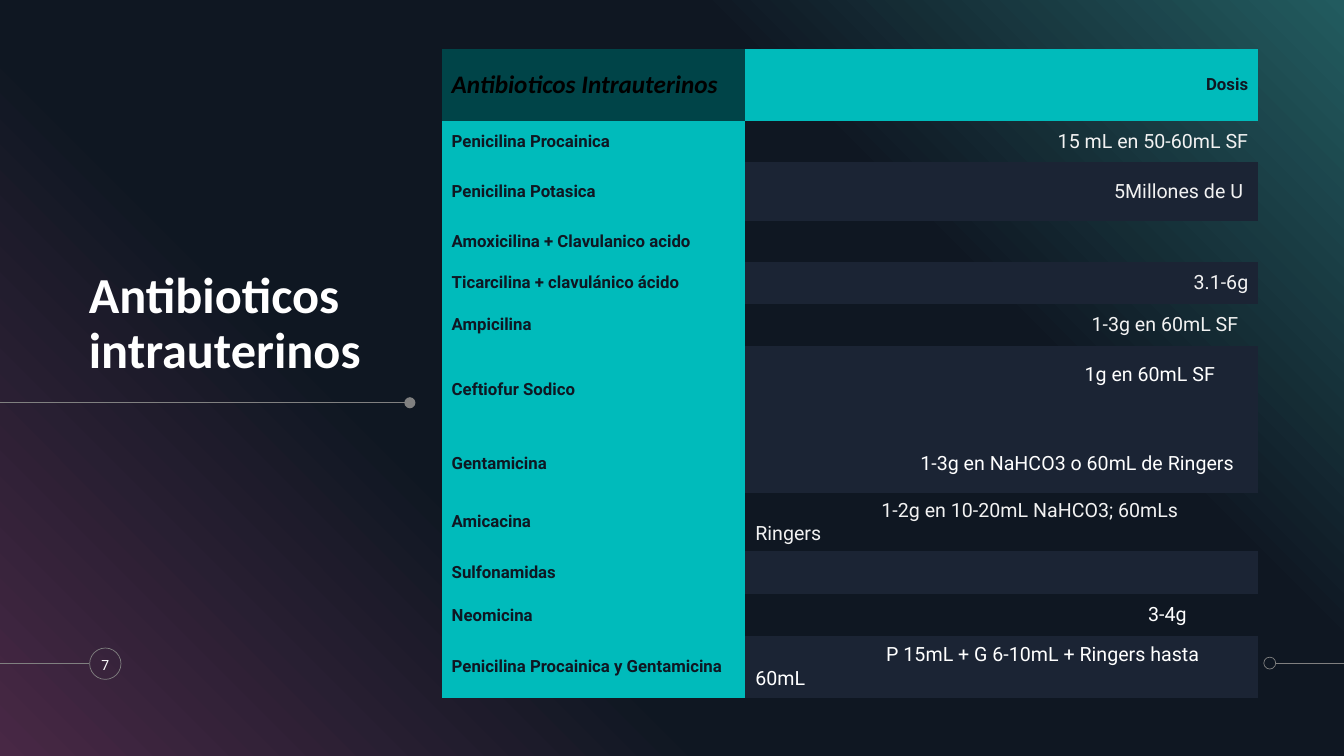
from dataclasses import dataclass

import pptx
import pptx.dml.color
import pptx.enum.shapes
import pptx.enum.text
import pptx.oxml
import pptx.oxml.ns
import pptx.util
from lxml import etree

Cm = pptx.util.Cm
Pt = pptx.util.Pt
Align = pptx.enum.text.PP_ALIGN
Anchor = pptx.enum.text.MSO_ANCHOR
NO_GRID_STYLE = "{2D5ABB26-0587-4C30-8999-92F81FD0307C}"


@dataclass(frozen=True)
class Theme:
    heading_font: str = "Calibri"
    body_font: str = "Roboto"
    title_size: float = 36
    header_size: float = 18
    dose_size: float = 14
    drug_size: float = 12
    number_size: float = 10
    white: str = "FFFFFF"
    soft_white: str = "F2F2F2"
    black: str = "000000"
    ink: str = "0F1722"
    teal: str = "00BBBB"
    dark_teal: str = "004448"
    band: str = "1B2434"
    grey: str = "808080"
    rule_width: float = 0.5
    backdrop: tuple = ((0, "482845"), (34, "0F1722"), (69, "0F1722"), (100, "225B5F"))


@dataclass(frozen=True)
class Treatment:
    """One table row; lengths in cm. A first-line indent makes the dose left-aligned."""
    drug: str
    dose: str
    height: float
    shaded: bool
    soft: bool = True
    indent: float = 0
    right: float = 0.25
    bottom: float = 0.13


TREATMENTS = [
    Treatment("Penicilina Procainica", "15 mL en 50-60mL SF", 1.05, False),
    Treatment("Penicilina Potasica", "5Millones de U", 1.47, True, right=0.38),
    Treatment("Amoxicilina + Clavulanico acido", "", 1.05, False),
    Treatment("Ticarcilina + clavulánico ácido", "3.1-6g", 1.05, True),
    Treatment("Ampicilina", "1-3g en 60mL SF", 1.05, False, right=0.5),
    Treatment("Ceftiofur Sodico", "1g en 60mL SF", 2.24, True, False, 8.3, bottom=0.9),
    Treatment("Gentamicina", "1-3g en NaHCO3 o 60mL de Ringers", 1.47, True, False, 4.16),
    Treatment("Amicacina", "1-2g en 10-20mL NaHCO3; 60mLs Ringers", 1.47, False,
              indent=3.18, right=0.75),
    Treatment("Sulfonamidas", "", 1.09, True),
    Treatment("Neomicina", "3-4g", 1.05, False, False, 9.9),
    Treatment("Penicilina Procainica y Gentamicina", "P 15mL + G 6-10mL + Ringers hasta 60mL",
              1.55, True, False, 3.3),
]


def rgb(value):
    return pptx.dml.color.RGBColor.from_string(value)


class SlideBuilder:
    def __init__(self, slide, theme):
        self.slide = slide
        self.theme = theme

    def set_text(self, frame, text, size, color, bold=False, italic=False,
                 font=None, align=Align.LEFT):
        paragraph = frame.paragraphs[0]
        paragraph.text = text
        paragraph.alignment = align
        for run in paragraph.runs:
            run.font.name = font or self.theme.body_font
            run.font.size = Pt(size)
            run.font.bold = bold
            run.font.italic = italic
            run.font.color.rgb = rgb(color)
        return paragraph

    def backdrop(self):
        fill = self.slide.background.fill
        fill.gradient()
        fill.gradient_angle = 45
        stops = self.slide.element.xpath(".//p:bg//a:gsLst")[0]
        for stop in list(stops):
            stops.remove(stop)
        for percent, color in self.theme.backdrop:
            stop = etree.SubElement(stops, pptx.oxml.ns.qn("a:gs"), pos=str(percent * 1000))
            etree.SubElement(stop, pptx.oxml.ns.qn("a:srgbClr"), val=color)

    def title(self, text, left, top, width, height):
        heading = self.slide.shapes.title
        heading.left, heading.top = Cm(left), Cm(top)
        heading.width, heading.height = Cm(width), Cm(height)
        frame = heading.text_frame
        frame.word_wrap = True
        frame.auto_size = pptx.enum.text.MSO_AUTO_SIZE.NONE
        frame.vertical_anchor = Anchor.BOTTOM
        frame.margin_left = frame.margin_right = frame.margin_top = frame.margin_bottom = 0
        paragraph = self.set_text(frame, text, self.theme.title_size, self.theme.white,
                                  bold=True, font=self.theme.heading_font)
        paragraph.line_spacing = 0.9

    def rule(self, start, end, y):
        line = self.slide.shapes.add_connector(
            pptx.enum.shapes.MSO_CONNECTOR.STRAIGHT, Cm(start), Cm(y), Cm(end), Cm(y))
        line.line.color.rgb = rgb(self.theme.grey)
        line.line.width = Pt(self.theme.rule_width)
        properties = line.element.xpath("./p:spPr")[0]
        etree.SubElement(properties, pptx.oxml.ns.qn("a:effectLst"))

    def circle(self, left, top, diameter, filled=False):
        circle = self.slide.shapes.add_shape(
            pptx.enum.shapes.MSO_SHAPE.OVAL, Cm(left), Cm(top), Cm(diameter), Cm(diameter))
        circle.shadow.inherit = False
        if filled:
            circle.fill.solid()
            circle.fill.fore_color.rgb = rgb(self.theme.grey)
            circle.line.fill.background()
        else:
            circle.fill.background()
            circle.line.color.rgb = rgb(self.theme.grey)
            circle.line.width = Pt(self.theme.rule_width)

    def page_number(self, text, left, top, width, height):
        box = self.slide.shapes.add_textbox(Cm(left), Cm(top), Cm(width), Cm(height))
        frame = box.text_frame
        frame.word_wrap = True
        frame.vertical_anchor = Anchor.MIDDLE
        self.set_text(frame, text, self.theme.number_size, self.theme.white,
                      align=Align.CENTER)

    def cell(self, cell, text, size, color, fill=None, **style):
        cell.vertical_anchor = Anchor.MIDDLE
        if fill:
            cell.fill.solid()
            cell.fill.fore_color.rgb = rgb(fill)
        else:
            cell.fill.background()
        return self.set_text(cell.text_frame, text, size, color, **style)

    def dose_table(self, left, top, column_widths, header_height, treatments):
        theme = self.theme
        heights = [header_height] + [treatment.height for treatment in treatments]
        frame = self.slide.shapes.add_table(
            len(heights), len(column_widths), Cm(left), Cm(top),
            Cm(sum(column_widths)), Cm(sum(heights)))
        table = frame.table
        table.horz_banding = False
        frame.element.xpath(".//a:tableStyleId")[0].text = NO_GRID_STYLE
        for column, width in zip(table.columns, column_widths):
            column.width = Cm(width)
        for row, height in zip(table.rows, heights):
            row.height = Cm(height)

        self.cell(table.cell(0, 0), "Antibioticos Intrauterinos", theme.header_size, theme.black,
                  theme.dark_teal, bold=True, italic=True, font=theme.heading_font)
        self.cell(table.cell(0, 1), "Dosis", theme.drug_size, theme.ink, theme.teal,
                  bold=True, align=Align.RIGHT)
        for index, treatment in enumerate(treatments, start=1):
            self.cell(table.cell(index, 0), treatment.drug, theme.drug_size, theme.ink,
                      theme.teal, bold=True)
            dose = table.cell(index, 1)
            dose.margin_right = Cm(treatment.right)
            dose.margin_bottom = Cm(treatment.bottom)
            paragraph = self.cell(
                dose, treatment.dose, theme.dose_size,
                theme.soft_white if treatment.soft else theme.white,
                theme.band if treatment.shaded else None,
                align=Align.LEFT if treatment.indent else Align.RIGHT)
            if treatment.indent:
                properties = paragraph._p.get_or_add_pPr()
                properties.set("marL", "0")
                properties.set("indent", str(int(Cm(treatment.indent))))


def main():
    deck = pptx.Presentation()
    deck.slide_width, deck.slide_height = Cm(33.87), Cm(19.05)
    builder = SlideBuilder(deck.slides.add_slide(deck.slide_layouts[5]), Theme())
    builder.backdrop()
    builder.rule(0, 10.21, 10.13)
    builder.circle(10.19, 10.01, 0.28, filled=True)
    builder.circle(2.26, 16.33, 0.79)
    builder.rule(32.16, 33.87, 16.71)
    builder.circle(31.85, 16.56, 0.3)
    builder.rule(0, 2.24, 16.72)
    builder.title("Antibioticos intrauterinos", 2.24, 6.27, 10.87, 3.28)
    builder.dose_table(11.13, 1.24, (7.65, 12.93), 1.8, TREATMENTS)
    builder.page_number("7", 2.16, 16.33, 0.99, 0.84)
    deck.save("out.pptx")


if __name__ == "__main__":
    main()
